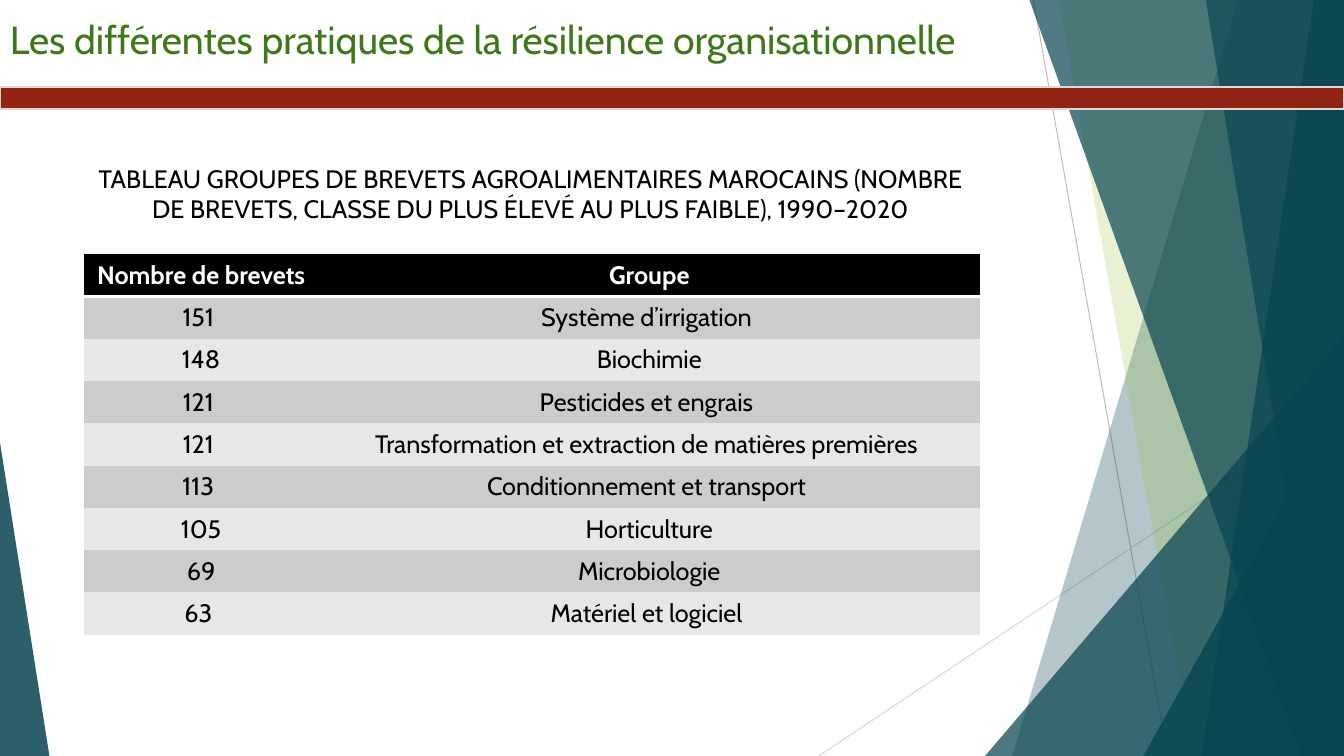
"""Build the slide on Moroccan agri-food patent groups."""
from dataclasses import dataclass

from lxml.etree import SubElement
from pptx import Presentation
from pptx.dml.color import RGBColor
from pptx.enum.shapes import MSO_CONNECTOR, MSO_SHAPE
from pptx.enum.text import MSO_ANCHOR, PP_ALIGN
from pptx.oxml.ns import qn
from pptx.util import Inches, Pt


@dataclass(frozen=True)
class Theme:
    """Colours, font and type sizes of the slide."""
    font: str = "Cabin"
    title_size: int = 28
    body_size: int = 18
    title: str = "3F7819"
    black: str = "000000"
    white: str = "FFFFFF"
    teal: str = "084450"
    lime: str = "90C226"
    banner: str = "932313"
    dark_rule: str = "BFBFBF"
    light_rule: str = "D9D9D9"
    bands: tuple = ("CCCCCC", "E7E7E7")


THEME = Theme()
WIDTH, HEIGHT = 13.33, 7.5
COLUMN_WIDTHS = (2.33, 6.56)
ROW_HEIGHT = 0.42
NO_GRID_STYLE = "{2D5ABB26-0587-4C30-8999-92F81FD0307C}"
TITLE = "Les différentes pratiques de la résilience organisationnelle"
CAPTION = ("TABLEAU GROUPES DE BREVETS AGROALIMENTAIRES MAROCAINS (NOMBRE "
           "DE BREVETS, CLASSE DU PLUS ÉLEVÉ AU PLUS FAIBLE), 1990–2020")
PATENTS = (
    ("Nombre de brevets", "Groupe"),
    ("151 ", "Système d’irrigation "),
    ("148", "Biochimie"),
    ("121 ", "Pesticides et engrais "),
    ("121 ", "Transformation et extraction de matières premières "),
    ("113 ", "Conditionnement et transport "),
    ("105", "Horticulture"),
    ("69", "Microbiologie"),
    ("63 ", "Matériel et logiciel "),
)


def paint(shape, color, opacity=100):
    """Give a shape a flat fill without outline or shadow."""
    shape.shadow.inherit = False
    shape.line.fill.background()
    shape.fill.solid()
    shape.fill.fore_color.rgb = RGBColor.from_string(color)
    if opacity < 100:
        tint = shape.element.spPr.find(qn("a:solidFill"))[0]
        SubElement(tint, qn("a:alpha"), val=str(opacity * 1000))


def add_panel(slide, top_left, bottom_left, color, opacity):
    """Draw a slanted panel reaching the right edge of the slide."""
    outline = slide.shapes.build_freeform(Inches(top_left), 0)
    outline.add_line_segments(
        [(Inches(x), Inches(y)) for x, y in
         ((WIDTH, 0), (WIDTH, HEIGHT), (bottom_left, HEIGHT))])
    paint(outline.convert_to_shape(), color, opacity)


def add_corner(slide, left, top, width, apex, opacity):
    """Draw a right triangle standing on the bottom edge."""
    corner = slide.shapes.add_shape(
        MSO_SHAPE.ISOSCELES_TRIANGLE, Inches(left), Inches(top),
        Inches(width), Inches(HEIGHT - top))
    corner.adjustments[0] = apex
    paint(corner, THEME.teal, opacity)


def add_rule(slide, start, end, color):
    """Draw a thin straight line."""
    rule = slide.shapes.add_connector(
        MSO_CONNECTOR.STRAIGHT, *(Inches(value) for value in (*start, *end)))
    rule.line.color.rgb = RGBColor.from_string(color)
    rule.line.width = Pt(0.75)
    SubElement(rule.element.spPr, qn("a:effectLst"))


def add_banner(slide):
    """Draw the full-width bar under the title."""
    banner = slide.shapes.add_shape(
        MSO_SHAPE.RECTANGLE, 0, Inches(0.86), Inches(WIDTH), Inches(0.22))
    paint(banner, THEME.banner)
    banner.line.color.rgb = RGBColor.from_string(THEME.light_rule)
    banner.line.width = Pt(1.5)


def write_text(frame, text, *, size=THEME.body_size, color=THEME.black,
               bold=False, align=PP_ALIGN.CENTER):
    """Write one formatted paragraph into a text frame."""
    frame.word_wrap = True
    paragraph = frame.paragraphs[0]
    paragraph.alignment = align
    run = paragraph.add_run()
    run.text = text
    run.font.name = THEME.font
    run.font.size = Pt(size)
    run.font.bold = bold
    run.font.color.rgb = RGBColor.from_string(color)


def add_text(slide, box, text, **text_format):
    """Add a text box at left, top, width, height."""
    holder = slide.shapes.add_textbox(*(Inches(value) for value in box))
    write_text(holder.text_frame, text, **text_format)


def underline_cell(cell):
    """Draw a white border below a cell."""
    properties = cell._tc.get_or_add_tcPr()
    border = SubElement(properties, qn("a:lnB"), w=str(Pt(2)))
    properties.insert(0, border)
    fill = SubElement(border, qn("a:solidFill"))
    SubElement(fill, qn("a:srgbClr"), val=THEME.white)


def add_patent_table(slide):
    """Add the banded table of patent groups."""
    holder = slide.shapes.add_table(
        len(PATENTS), len(COLUMN_WIDTHS), Inches(0.83), Inches(2.52),
        Inches(sum(COLUMN_WIDTHS)), Inches(ROW_HEIGHT * len(PATENTS)))
    holder.element.find(".//" + qn("a:tableStyleId")).text = NO_GRID_STYLE
    patents = holder.table
    for column, width in zip(patents.columns, COLUMN_WIDTHS):
        column.width = Inches(width)
    for index, (row, entries) in enumerate(zip(patents.rows, PATENTS)):
        row.height = Inches(ROW_HEIGHT)
        header = index == 0
        band = THEME.black if header else THEME.bands[(index - 1) % 2]
        for cell, entry in zip(row.cells, entries):
            cell.fill.solid()
            cell.fill.fore_color.rgb = RGBColor.from_string(band)
            cell.vertical_anchor = MSO_ANCHOR.MIDDLE
            write_text(cell.text_frame, entry, bold=header,
                       color=THEME.white if header else THEME.black)
            if header:
                underline_cell(cell)


def add_backdrop(slide):
    """Draw the layered panels, corners and rules at the slide edges."""
    add_rule(slide, (10.25, 0), (11.58, HEIGHT), THEME.dark_rule)
    add_rule(slide, (WIDTH, 4.03), (8.12, HEIGHT), THEME.light_rule)
    add_panel(slide, 12.28, 10.04, THEME.teal, 30)
    add_panel(slide, 10.5, 11.83, THEME.lime, 20)
    add_corner(slide, 9.77, 3.33, 3.56, 1, 72)
    for top_left, bottom_left, opacity in (
            (10.21, 12.91, 70), (13.03, 11.92, 70), (11.96, 13.18, 65)):
        add_panel(slide, top_left, bottom_left, THEME.teal, opacity)
    add_corner(slide, 11.34, 3.93, 1.99, 1, 80)
    add_corner(slide, 0, 4.39, 0.49, 0, 85)


def main():
    """Assemble and save the slide."""
    deck = Presentation()
    deck.slide_width, deck.slide_height = Inches(WIDTH), Inches(HEIGHT)
    slide = deck.slides.add_slide(deck.slide_layouts[6])
    add_backdrop(slide)
    add_banner(slide)
    add_text(slide, (0, 0.1, 11.99, 0.57), TITLE, size=THEME.title_size,
             color=THEME.title, align=PP_ALIGN.LEFT)
    add_patent_table(slide)
    add_text(slide, (0.8, 1.57, 8.92, 0.94), CAPTION)
    deck.save("out.pptx")


if __name__ == "__main__":
    main()
